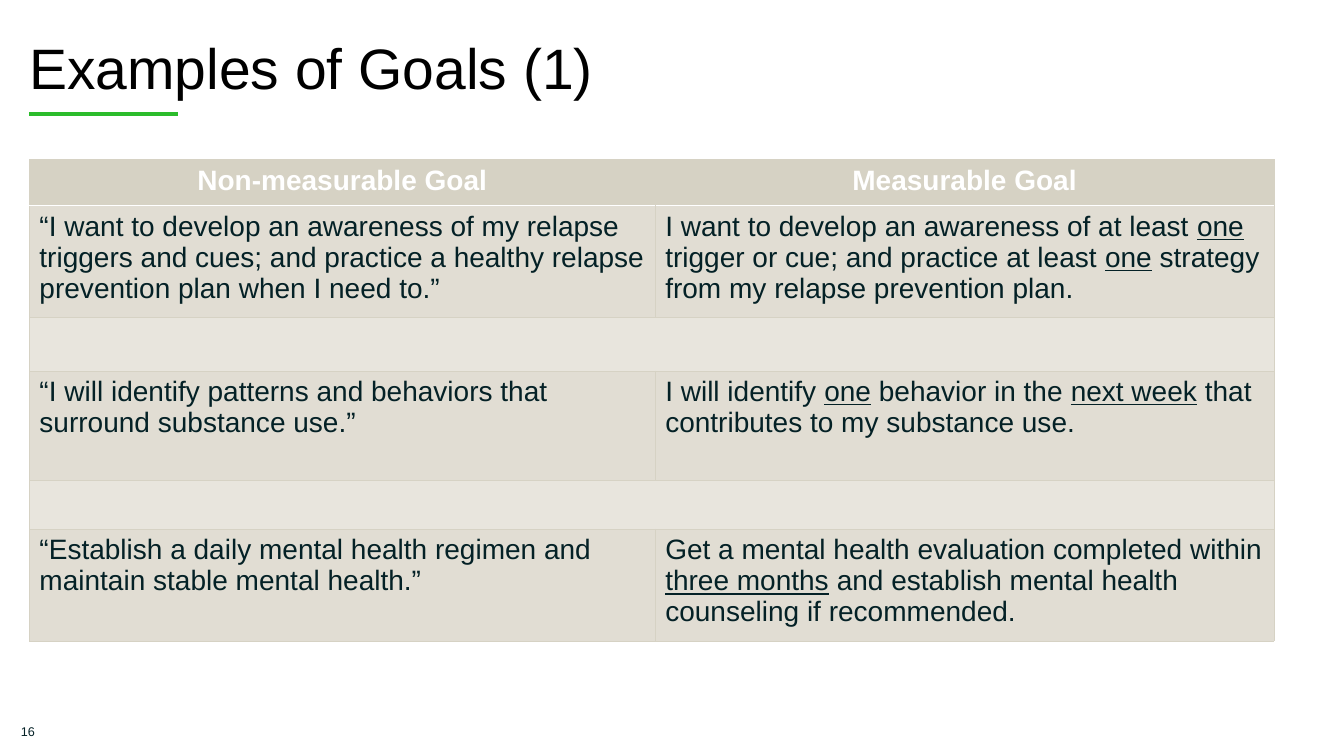
from pptx import Presentation
from pptx.dml.color import RGBColor
from pptx.enum.shapes import MSO_CONNECTOR
from pptx.enum.text import MSO_ANCHOR, MSO_AUTO_SIZE, PP_ALIGN
from pptx.oxml.ns import qn
from pptx.util import Pt
from lxml import etree

STRAIGHT = MSO_CONNECTOR.STRAIGHT
MIDDLE = MSO_ANCHOR.MIDDLE
LEFT, CENTER = PP_ALIGN.LEFT, PP_ALIGN.CENTER
NO_FIT = MSO_AUTO_SIZE.NONE

# Content: each cell is a list of pieces, every second piece is underlined
TITLE = "Examples of Goals (1)"
PAGE_NUMBER = "16"
HEADINGS = (["Non-measurable Goal"], ["Measurable Goal"])
GOALS = [
    (["“I want to develop an awareness of my relapse triggers and cues; "
      "and practice a healthy relapse prevention plan when I need to.”"],
     ["I want to develop an awareness of at least ", "one",
      " trigger or cue; and practice at least ", "one",
      " strategy from my relapse prevention plan."]),
    (["“I will identify patterns and behaviors that surround substance use.”"],
     ["I will identify ", "one", " behavior in the ", "next week",
      " that contributes to my substance use."]),
    (["“Establish a daily mental health regimen and maintain stable mental health.”"],
     ["Get a mental health evaluation completed within ", "three months",
      " and establish mental health counseling if recommended."]),
]

# Layout and colours
MARGIN = 21
COLUMN_WIDTHS = (447, 442)
ROW_HEIGHTS = (33, 80, 38, 78, 35, 80)
TABLE_TOP = 114
INK, SAND, GOAL_FILL, GAP_FILL = "042126", "D6D2C4", "E1DDD3", "E8E5DD"
WHITE, GREEN, BLACK = "FFFFFF", "2BBC2B", "000000"
HEADING_FORMAT = {"size": Pt(20), "name": "Arial", "bold": True}
GOAL_FORMAT = {"size": Pt(20), "name": "Arial", "bold": False}


def color(value):
    return RGBColor.from_string(value)


def set_values(target, values):
    for name, value in values.items():
        setattr(target, name, value)


def write(paragraph, pieces, font_format, ink, alignment=LEFT):
    paragraph.alignment = alignment
    for index, piece in enumerate(pieces):
        run = paragraph.add_run()
        run.text = piece
        set_values(run.font, font_format)
        run.font.color.rgb = color(ink)
        if index % 2:
            run.font.underline = True


def set_borders(cell, borders):
    properties = cell._tc.get_or_add_tcPr()
    for side, (ink, width) in borders.items():
        line = etree.SubElement(properties, qn(f"a:ln{side}"), w=str(Pt(width)))
        if ink is None:
            etree.SubElement(line, qn("a:noFill"))
        else:
            fill = etree.SubElement(line, qn("a:solidFill"))
            etree.SubElement(fill, qn("a:srgbClr"), val=ink)


presentation = Presentation()
presentation.slide_width, presentation.slide_height = Pt(960), Pt(540)
slide = presentation.slides.add_slide(presentation.slide_layouts[5])

# Green rule under the title
rule = slide.shapes.add_connector(STRAIGHT, Pt(MARGIN), Pt(81.5), Pt(127.5), Pt(81.5))
rule.line.color.rgb = color(GREEN)
rule.line.width = Pt(3)
etree.SubElement(rule._element.spPr, qn("a:effectLst"))

# Page number
number = slide.shapes.add_textbox(Pt(1), Pt(508), Pt(38), Pt(29))
set_values(number.text_frame, {"word_wrap": True, "vertical_anchor": MIDDLE})
write(number.text_frame.paragraphs[0], [PAGE_NUMBER],
      {"size": Pt(9), "name": "Arial"}, INK, CENTER)

# Title
title = slide.shapes.title
set_values(title, {"left": Pt(MARGIN), "top": Pt(31.5), "width": Pt(899), "height": Pt(41)})
set_values(title.text_frame, {
    "margin_left": 0, "margin_top": 0, "margin_right": 0, "margin_bottom": 0,
    "vertical_anchor": MIDDLE, "word_wrap": True, "auto_size": NO_FIT})
heading = title.text_frame.paragraphs[0]
set_values(heading, {"line_spacing": 0.8, "space_after": Pt(6)})
write(heading, [TITLE], {"size": Pt(40.7), "name": "Arial"}, BLACK)

# Goals table: heading row, then goal rows with a merged gap row between them
table = slide.shapes.add_table(
    len(ROW_HEIGHTS), len(COLUMN_WIDTHS), Pt(MARGIN), Pt(TABLE_TOP),
    Pt(sum(COLUMN_WIDTHS)), Pt(sum(ROW_HEIGHTS))).table
for column, width in zip(table.columns, COLUMN_WIDTHS):
    column.width = Pt(width)
for row_index, height in enumerate(ROW_HEIGHTS):
    table.rows[row_index].height = Pt(height)
    is_heading = row_index == 0
    is_gap = row_index > 0 and row_index % 2 == 0
    if is_gap:
        table.cell(row_index, 0).merge(table.cell(row_index, 1))
    for column_index in range(len(COLUMN_WIDTHS)):
        cell = table.cell(row_index, column_index)
        borders = dict.fromkeys("LRTB", (SAND, 0.5))
        if is_heading:
            borders["B"] = (WHITE, 1)
            borders["L" if column_index else "R"] = (None, 0)
        elif row_index == 1:
            borders["T"] = (WHITE, 1)
        set_borders(cell, borders)
        cell.fill.solid()
        cell.fill.fore_color.rgb = color(
            SAND if is_heading else GAP_FILL if is_gap else GOAL_FILL)
        paragraph = cell.text_frame.paragraphs[0]
        if is_heading:
            write(paragraph, HEADINGS[column_index], HEADING_FORMAT, WHITE, CENTER)
        elif not is_gap:
            write(paragraph, GOALS[row_index // 2][column_index], GOAL_FORMAT, INK)

presentation.save("out.pptx")
